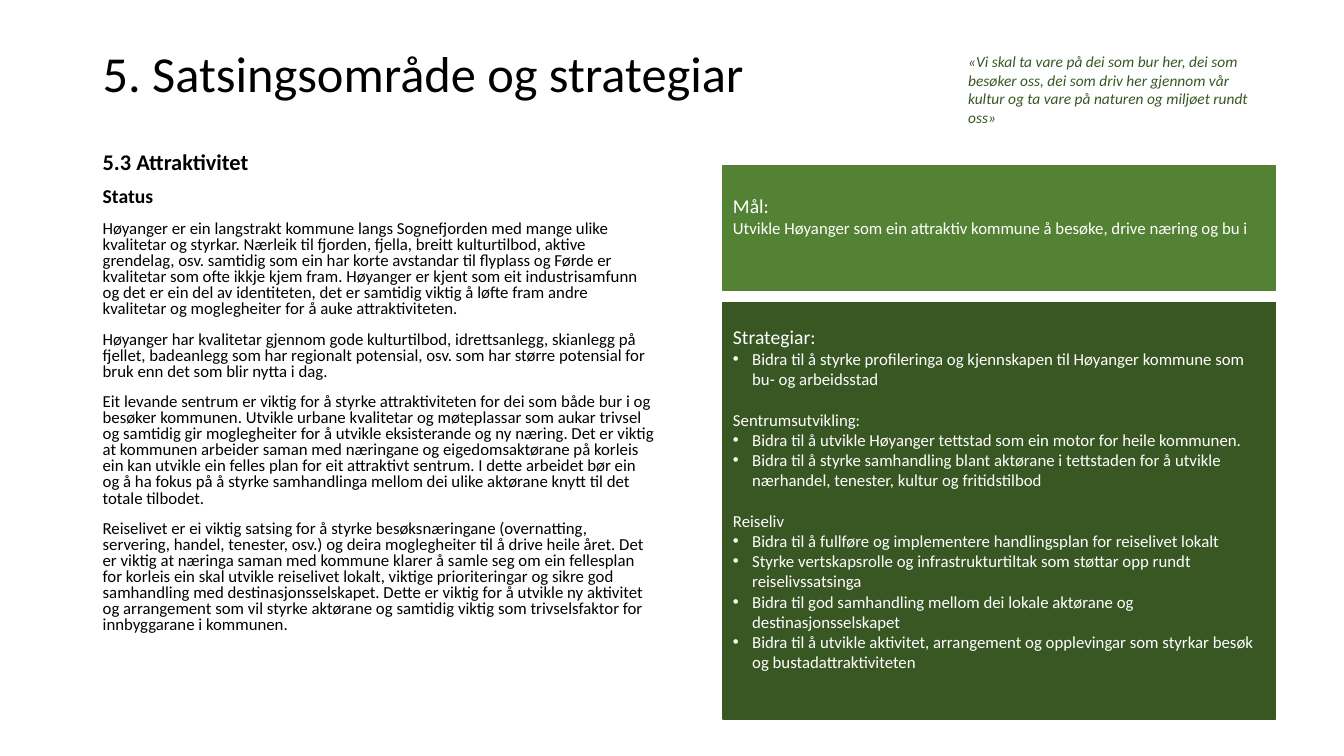
from dataclasses import dataclass

from lxml.etree import SubElement
from pptx import Presentation
from pptx.dml.color import RGBColor as RGB
from pptx.enum.shapes import MSO_SHAPE as Kind
from pptx.enum.text import MSO_ANCHOR as Anchor
from pptx.enum.text import MSO_AUTO_SIZE as Fit
from pptx.enum.text import PP_ALIGN as Align
from pptx.oxml.ns import qn
from pptx.shapes.base import BaseShape as Shape
from pptx.slide import Slide
from pptx.util import Emu, Inches, Pt


@dataclass(frozen=True)
class Theme:
    font: str = "Calibri"
    ink: str = "000000"
    white: str = "FFFFFF"
    leaf: str = "548235"
    pine: str = "385723"
    title: float = 36
    head: float = 16
    sub: float = 14
    text: float = 12
    quote: float = 11
    gap: float = 10
    line: float = 14.65  # height of one line of text


@dataclass(frozen=True)
class Box:
    """Place and size in hundredths of the slide's width and height."""
    x: float
    y: float
    w: float
    h: float


@dataclass(frozen=True)
class Para:
    text: str
    size: float = 12
    bold: bool = False
    italic: bool = False
    bullet: bool = False
    before: float = 0


@dataclass(frozen=True)
class Panel:
    box: Box
    fill: str
    paras: list[Para]


T = Theme()
WIDE, HIGH = Inches(13.333), Inches(7.5)
HANG = Inches(0.19)
FOOT = Inches(0.29)  # lifts the centred panel text by half a line

# Places on the grid
LEFT, RIGHT = 6.9, 53.8
TITLE = Box(LEFT, 4.9, 86.3, 10.4)
BODY = Box(LEFT, 19.6, 42.6, 70)
GOAL = Box(RIGHT, 21.9, 41.1, 16.5)
PLAN = Box(RIGHT, 40, 41.1, 55.1)
QUOTE = Box(71.3, 6.3, 23.5, 11.2)

# Left column
STATUS = [
    Para("5.3 Attraktivitet", T.head, bold=True, before=T.gap),
    Para("Status", T.sub, bold=True, before=T.gap),
] + [Para(text, T.text, before=T.gap) for text in (
    "Høyanger er ein langstrakt kommune langs Sognefjorden med mange ulike "
    "kvalitetar og styrkar. Nærleik til fjorden, fjella, breitt kulturtilbod, "
    "aktive grendelag, osv. samtidig som ein har korte avstandar til flyplass "
    "og Førde er kvalitetar som ofte ikkje kjem fram. Høyanger er kjent som "
    "eit industrisamfunn og det er ein del av identiteten, det er samtidig "
    "viktig å løfte fram andre kvalitetar og moglegheiter for å auke "
    "attraktiviteten.",
    "Høyanger har kvalitetar gjennom gode kulturtilbod, idrettsanlegg, "
    "skianlegg på fjellet, badeanlegg som har regionalt potensial, osv. som "
    "har større potensial for bruk enn det som blir nytta i dag.",
    "Eit levande sentrum er viktig for å styrke attraktiviteten for dei som "
    "både bur i og besøker kommunen. Utvikle urbane kvalitetar og møteplassar "
    "som aukar trivsel og samtidig gir moglegheiter for å utvikle "
    "eksisterande og ny næring. Det er viktig at kommunen arbeider saman med "
    "næringane og eigedomsaktørane på korleis ein kan utvikle ein felles plan "
    "for eit attraktivt sentrum. I dette arbeidet bør ein og å ha fokus på å "
    "styrke samhandlinga mellom dei ulike aktørane knytt til det totale "
    "tilbodet.",
    "Reiselivet er ei viktig satsing for å styrke besøksnæringane "
    "(overnatting, servering, handel, tenester, osv.) og deira moglegheiter "
    "til å drive heile året. Det er viktig at næringa saman med kommune "
    "klarer å samle seg om ein fellesplan for korleis ein skal utvikle "
    "reiselivet lokalt, viktige prioriteringar og sikre god samhandling med "
    "destinasjonsselskapet. Dette er viktig for å utvikle ny aktivitet og "
    "arrangement som vil styrke aktørane og samtidig viktig som "
    "trivselsfaktor for innbyggarane i kommunen.",
)]


def group(head: Para, *items: str) -> list[Para]:
    return [head] + [Para(item, T.text, bullet=True) for item in items]


# Right column
PANELS = [
    Panel(GOAL, T.leaf, [
        Para("Mål:", T.sub),
        Para("Utvikle Høyanger som ein attraktiv kommune å besøke, "
             "drive næring og bu i", T.text),
    ]),
    Panel(PLAN, T.pine, [
        *group(Para("Strategiar:", T.sub),
               "Bidra til å styrke profileringa og kjennskapen til Høyanger "
               "kommune som bu- og arbeidsstad"),
        *group(Para("Sentrumsutvikling:", T.text, before=T.line),
               "Bidra til å utvikle Høyanger tettstad som ein motor for "
               "heile kommunen.",
               "Bidra til å styrke samhandling blant aktørane i tettstaden "
               "for å utvikle nærhandel, tenester, kultur og fritidstilbod"),
        *group(Para("Reiseliv", T.text, before=T.line),
               "Bidra til å fullføre og implementere handlingsplan for "
               "reiselivet lokalt",
               "Styrke vertskapsrolle og infrastrukturtiltak som støttar opp "
               "rundt reiselivssatsinga",
               "Bidra til god samhandling mellom dei lokale aktørane og "
               "destinasjonsselskapet",
               "Bidra til å utvikle aktivitet, arrangement og opplevingar "
               "som styrkar besøk og bustadattraktiviteten"),
    ]),
]


def place(box: Box) -> tuple[Emu, Emu, Emu, Emu]:
    return (Emu(int(WIDE * box.x / 100)), Emu(int(HIGH * box.y / 100)),
            Emu(int(WIDE * box.w / 100)), Emu(int(HIGH * box.h / 100)))


def write(shape: Shape, paras: list[Para], *, color: str = T.ink,
          space: float = 1.0, anchor: Anchor = Anchor.TOP) -> None:
    frame = shape.text_frame
    frame.word_wrap = True
    frame.vertical_anchor = anchor
    for i, para in enumerate(paras):
        p = frame.add_paragraph() if i else frame.paragraphs[0]
        p.alignment = Align.LEFT
        p.line_spacing = space
        p.space_before = Pt(para.before)
        if para.bullet:
            props = p._p.get_or_add_pPr()
            props.set("marL", str(HANG))
            props.set("indent", str(-HANG))
            SubElement(props, qn("a:buFont"), typeface="Arial")
            SubElement(props, qn("a:buChar"), char="•")
        run = p.add_run()
        run.text = para.text
        font = run.font
        font.name, font.size = T.font, Pt(para.size)
        font.bold, font.italic = para.bold, para.italic
        font.color.rgb = RGB.from_string(color)


def draw(slide: Slide, panel: Panel) -> None:
    rect = slide.shapes.add_shape(Kind.RECTANGLE, *place(panel.box))
    rect.shadow.inherit = False
    tint = RGB.from_string(panel.fill)
    rect.fill.solid()
    rect.fill.fore_color.rgb = tint
    rect.line.color.rgb = tint
    rect.line.width = Pt(1)
    rect.text_frame.margin_bottom = FOOT
    write(rect, panel.paras, color=T.white, anchor=Anchor.MIDDLE)


def main() -> None:
    deck = Presentation()
    deck.slide_width, deck.slide_height = WIDE, HIGH
    slide = deck.slides.add_slide(deck.slide_layouts[6])
    add = slide.shapes.add_textbox

    # Title and status text
    write(add(*place(TITLE)), [Para("5. Satsingsområde og strategiar", T.title)],
          space=0.9, anchor=Anchor.MIDDLE)
    write(add(*place(BODY)), STATUS, space=0.8)

    # Goal and strategies
    for panel in PANELS:
        draw(slide, panel)

    # Quote
    quote = add(*place(QUOTE))
    write(quote, [Para(
        "«Vi skal ta vare på dei som bur her, dei som besøker oss, dei som "
        "driv her gjennom vår kultur og ta vare på naturen og miljøet rundt "
        "oss»", T.quote, italic=True)], color=T.pine)
    quote.text_frame.auto_size = Fit.SHAPE_TO_FIT_TEXT

    deck.save("out.pptx")


if __name__ == "__main__":
    main()
